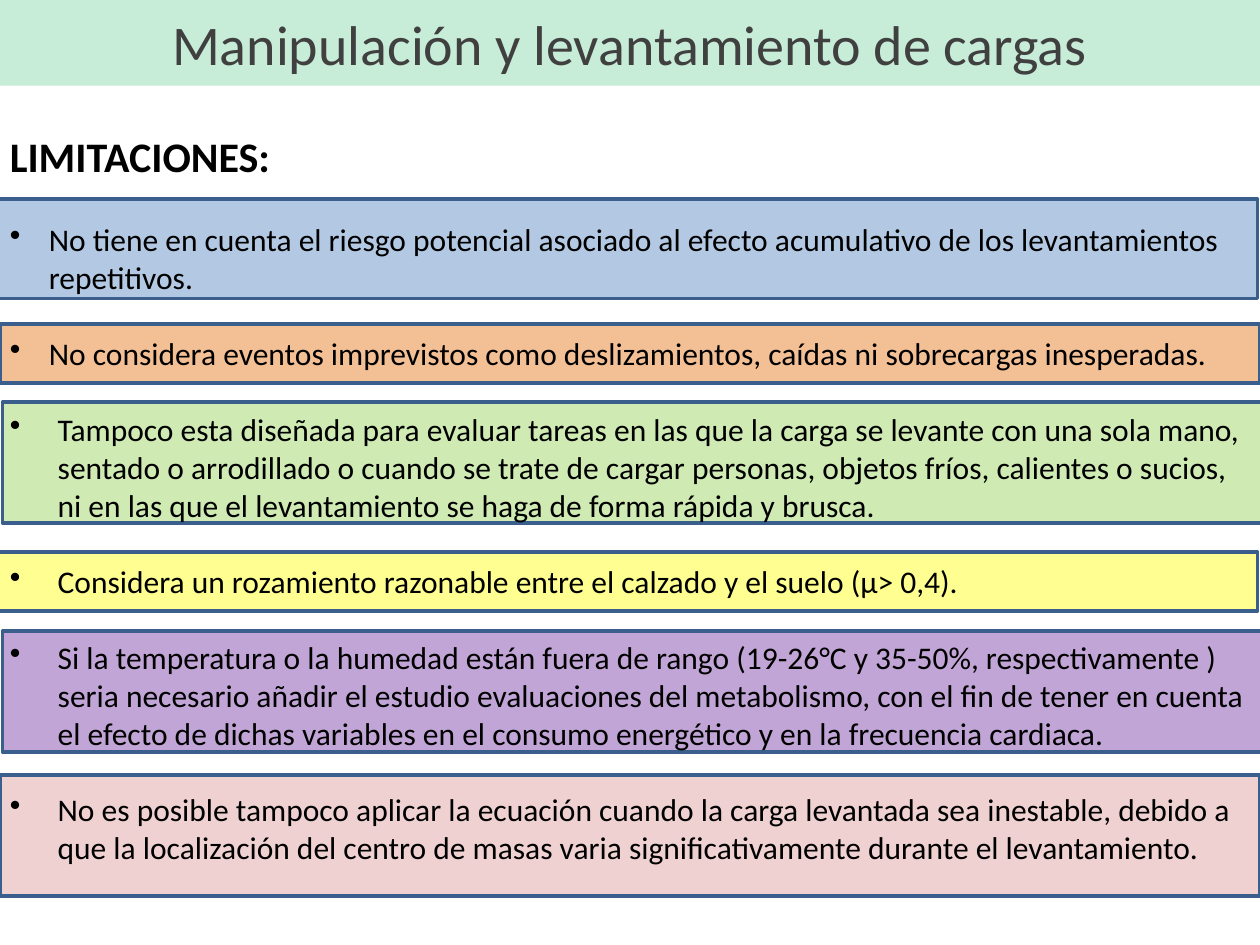
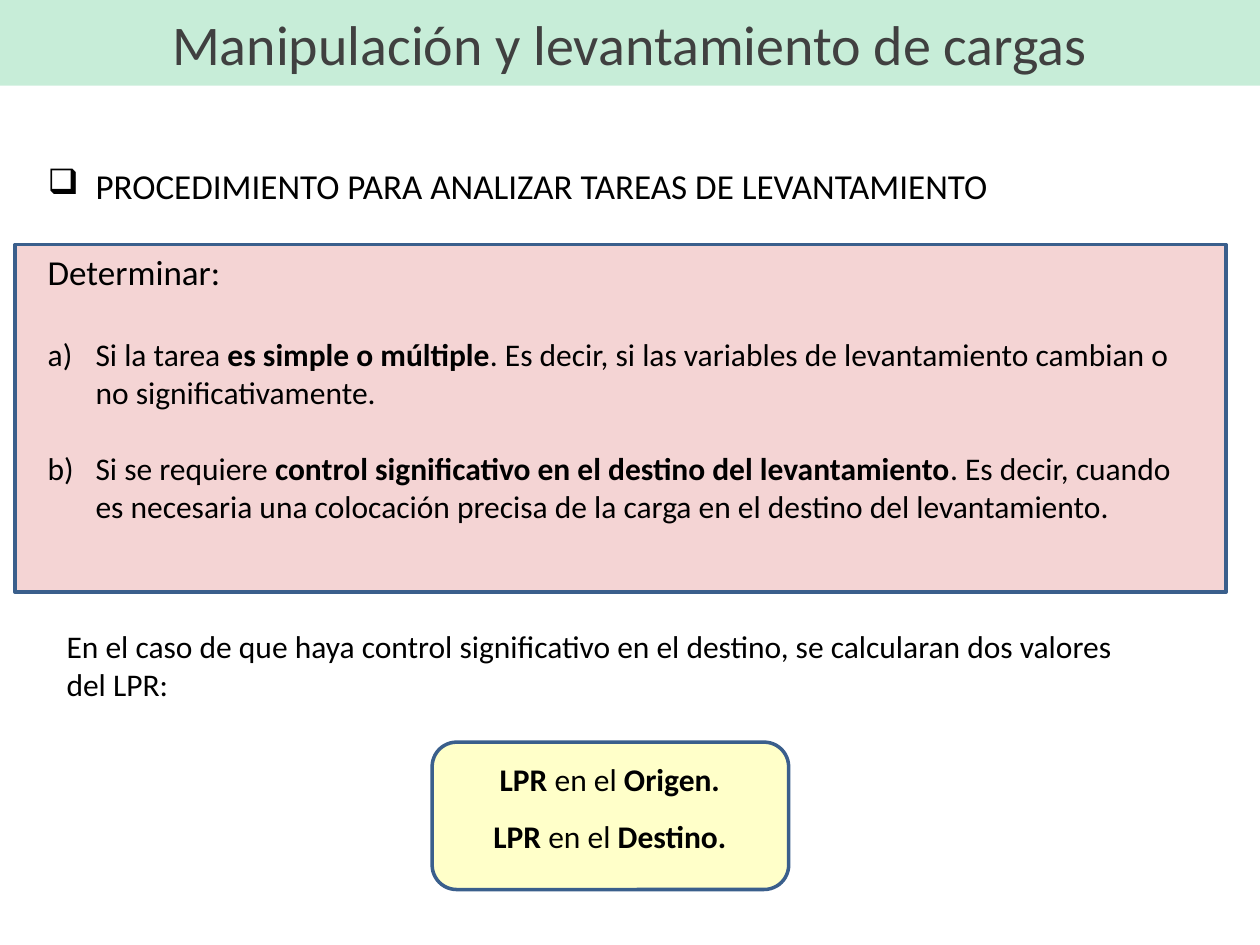
import dataclasses

import pptx
import pptx.dml.color
import pptx.enum.shapes
import pptx.enum.text
import pptx.oxml
import pptx.oxml.ns
import pptx.util

PX = 9144
TITLE = "Manipulación y levantamiento de cargas"


@dataclasses.dataclass(frozen=True)
class Theme:
    font: str = "Calibri"
    ink: str = "000000"
    title_ink: str = "404040"
    outline: str = "3A5F8C"
    band: tuple = ("00B050", 22)
    procedure: tuple = ("C00000", 17)
    results: tuple = ("FFFF00", 21)
    title_size: int = 32
    heading_size: int = 24
    lead_size: int = 20
    body_size: int = 18
    outline_width: int = 2
    blank_line: float = 1.22


THEME = Theme()
BULLET = '<a:buChar xmlns:a="%s" char="{}"/>'
LETTER = '<a:buAutoNum xmlns:a="%s" type="alphaLcParenR" startAt="{}"/>'

LIMITS_HEADING = "LIMITACIONES:"
LIMITS = [
    dict(text="No tiene en cuenta el riesgo potencial asociado al efecto acumulativo de los "
              "levantamientos repetitivos.",
         box=(-2, 158, 1000, 79), fill=("4F81BD", 43), hang=31),
    dict(text="No considera eventos imprevistos como deslizamientos, caídas ni sobrecargas "
              "inesperadas.",
         box=(0, 257, 1000, 47), fill=("E46C0A", 43), hang=31),
    dict(text="Tampoco esta diseñada para evaluar tareas en las que la carga se levante con una "
              "sola mano, sentado o arrodillado o cuando se trate de cargar personas, objetos "
              "fríos, calientes o sucios, ni en las que el levantamiento se haga de forma rápida "
              "y brusca.",
         box=(2, 319, 1000, 96), fill=("92D050", 43), hang=38),
    dict(text="Considera un rozamiento razonable entre el calzado y el suelo (µ˃ 0,4).",
         box=(-2, 438, 1000, 47), fill=("FFFF00", 43), hang=38),
    dict(text="Si la temperatura o la humedad están fuera de rango (19-26°C y 35-50%, "
              "respectivamente ) seria necesario añadir el estudio evaluaciones del metabolismo, "
              "con el fin de tener en cuenta el efecto de dichas variables en el consumo "
              "energético y en la frecuencia cardiaca.",
         box=(2, 501, 1000, 96), fill=("7030A0", 43), hang=38),
    dict(text="No es posible tampoco aplicar la ecuación cuando la carga levantada sea inestable, "
              "debido a que la localización del centro de masas varia significativamente durante "
              "el levantamiento.",
         box=(0, 615, 1000, 96), fill=("D99694", 43), hang=38),
]

PROCEDURE_HEADING = "PROCEDIMIENTO PARA ANALIZAR TAREAS DE LEVANTAMIENTO"
PROCEDURE_LEAD = "Determinar:"
PROCEDURE_STEPS = [
    [("Si la tarea ", False), ("es simple o múltiple", True),
     (". Es decir, si las variables de levantamiento cambian o no significativamente.", False)],
    [("Si se requiere ", False),
     ("control significativo en el destino del levantamiento", True),
     (". Es decir, cuando es necesaria una colocación precisa de la carga en el destino del "
      "levantamiento.", False)],
]
RESULTS_LEAD = ("En el caso de que haya control significativo en el destino, se calcularan dos "
                "valores del LPR:")
RESULTS = ["Origen.", "Destino."]


def rgb(code):
    return pptx.dml.color.RGBColor.from_string(code)


def place(box):
    return [length * PX for length in box]


def add_panel(slide, box, fill, outlined=True, kind="RECTANGLE"):
    panel = slide.shapes.add_shape(
        getattr(pptx.enum.shapes.MSO_SHAPE, kind), *place(box))
    panel.shadow.inherit = False
    color, opacity = fill
    panel.fill.solid()
    panel.fill.fore_color.rgb = rgb(color)
    tint = panel.fill._xPr.find(".//" + pptx.oxml.ns.qn("a:srgbClr"))
    tint.append(pptx.oxml.parse_xml(
        f'<a:alpha xmlns:a="{pptx.oxml.ns.namespaces("a")["a"]}" val="{opacity * 1000}"/>'))
    if outlined:
        panel.line.color.rgb = rgb(THEME.outline)
        panel.line.width = pptx.util.Pt(THEME.outline_width)
    else:
        panel.line.fill.background()
    return panel


def write(paragraph, segments, size=THEME.body_size, color=THEME.ink, gap=0,
          centered=False, spacing=None, mark=None, hang=38):
    for text, bold in segments:
        run = paragraph.add_run()
        run.text = text
        run.font.name = THEME.font
        run.font.size = pptx.util.Pt(size)
        run.font.bold = bold
        run.font.color.rgb = rgb(color)
    align = pptx.enum.text.PP_ALIGN
    paragraph.alignment = align.CENTER if centered else align.LEFT
    paragraph.space_before = pptx.util.Pt(round(gap * THEME.blank_line, 1))
    if spacing:
        paragraph.line_spacing = spacing
    if mark:
        properties = paragraph._p.get_or_add_pPr()
        properties.set("marL", str(hang * PX))
        properties.set("indent", str(-hang * PX))
        properties.append(pptx.oxml.parse_xml(mark % pptx.oxml.ns.namespaces("a")["a"]))


def add_text(slide, box, paragraphs):
    frame = slide.shapes.add_textbox(*place(box)).text_frame
    frame.word_wrap = True
    frame.auto_size = pptx.enum.text.MSO_AUTO_SIZE.SHAPE_TO_FIT_TEXT
    for index, (segments, style) in enumerate(paragraphs):
        write(frame.add_paragraph() if index else frame.paragraphs[0], segments, **style)


def add_slide(deck):
    slide = deck.slides.add_slide(deck.slide_layouts[6])
    band = add_panel(slide, (0, 0, 1000, 68), THEME.band, outlined=False)
    band.text_frame.vertical_anchor = pptx.enum.text.MSO_ANCHOR.MIDDLE
    write(band.text_frame.paragraphs[0], [(TITLE, False)], THEME.title_size,
          THEME.title_ink, centered=True)
    return slide


def build_limits(deck):
    slide = add_slide(deck)
    paragraphs = [([(LIMITS_HEADING, True)], dict(size=THEME.heading_size))]
    for limit in LIMITS:
        add_panel(slide, limit["box"], limit["fill"])
        paragraphs.append(([(limit["text"], False)], dict(
            gap=THEME.body_size, mark=BULLET.format("•"), hang=limit["hang"])))
    add_text(slide, (-2, 99, 1000, 596), paragraphs)


def build_procedure(deck):
    slide = add_slide(deck)
    add_panel(slide, (12, 194, 961, 276), THEME.procedure)
    add_panel(slide, (343, 589, 283, 117), THEME.results, kind="ROUNDED_RECTANGLE")
    add_text(slide, (28, 126, 772, 44), [
        ([(PROCEDURE_HEADING, False)], dict(size=THEME.lead_size, mark=BULLET.format("❑")))])

    steps = [([(PROCEDURE_LEAD, False)], dict(size=THEME.lead_size))]
    for number, step in enumerate(PROCEDURE_STEPS, 1):
        gap = THEME.lead_size if number == 1 else THEME.body_size
        steps.append((step, dict(gap=gap, mark=LETTER.format(number))))
    add_text(slide, (28, 194, 929, 229), steps)

    results = [([(RESULTS_LEAD, False)], {})]
    for number, place_name in enumerate(RESULTS):
        segments = [("LPR ", True), ("en el ", False), (place_name, True)]
        results.append((segments, dict(
            gap=0 if number else THEME.body_size, centered=True, spacing=1.5)))
    add_text(slide, (43, 493, 882, 192), results)


def main():
    deck = pptx.Presentation()
    deck.slide_width, deck.slide_height = place((1000, 750))
    build_limits(deck)
    build_procedure(deck)
    deck.save("out.pptx")


if __name__ == "__main__":
    main()
